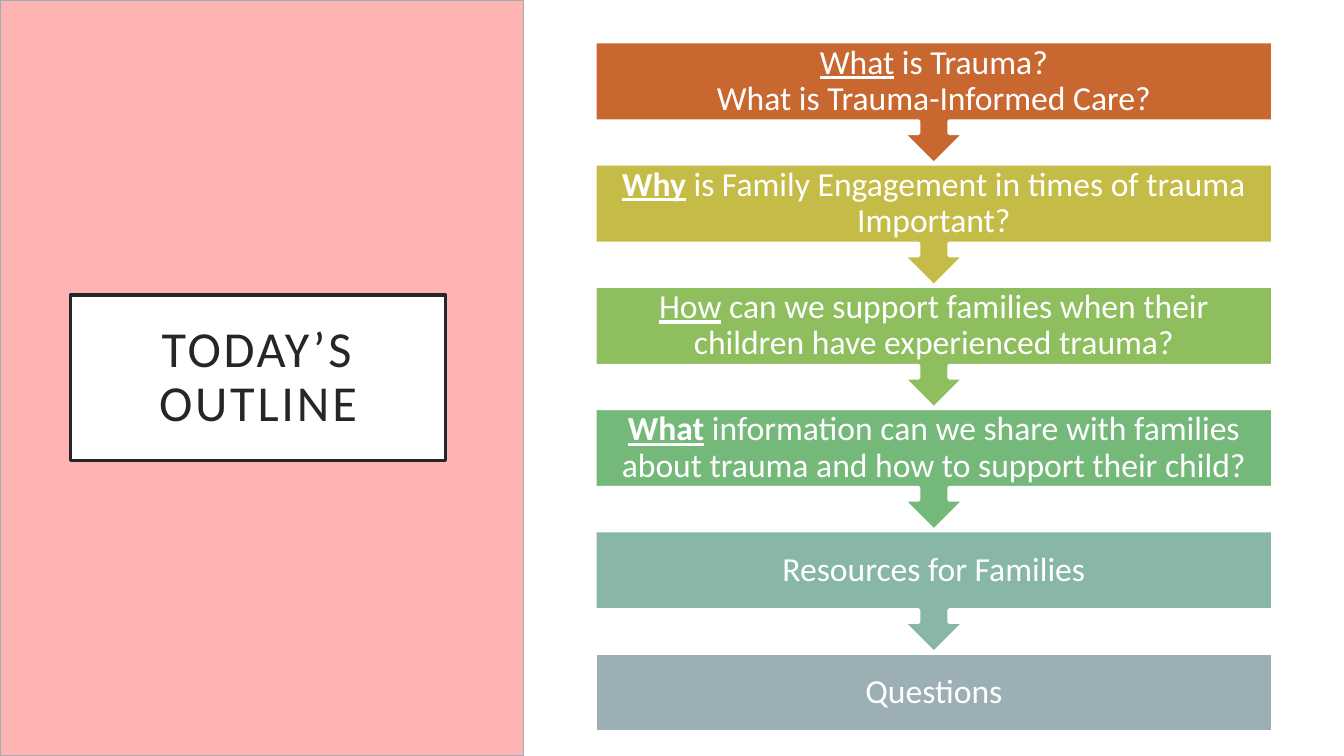
"""Builds the outline slide: a title panel beside a chain of six topics."""
import pptx
import pptx.util
import pptx.dml.color
import pptx.enum.shapes
import pptx.enum.text

Cm = pptx.util.Cm
Pt = pptx.util.Pt
RGBColor = pptx.dml.color.RGBColor
SHAPE = pptx.enum.shapes.MSO_SHAPE

WHITE = RGBColor(0xFF, 0xFF, 0xFF)
INK = RGBColor(0x26, 0x26, 0x26)
PINK = RGBColor(0xFF, 0xB3, 0xB3)
SLATE = RGBColor(0x9B, 0xAF, 0xB5)
ORANGE = RGBColor(0xC9, 0x67, 0x31)
MUSTARD = RGBColor(0xC4, 0xBC, 0x47)
LIME = RGBColor(0x8E, 0xBE, 0x5E)
GREEN = RGBColor(0x74, 0xB9, 0x7A)
TEAL = RGBColor(0x88, 0xB6, 0xA7)

SLIDE_WIDTH, SLIDE_HEIGHT = 33.87, 19.05
PANEL_WIDTH = 13.21
TOPIC_LEFT, TOPIC_TOP, TOPIC_WIDTH = 14.99, 1.05, 17.09
BOX_HEIGHT, TOPIC_STEP = 2, 3.08

TOPICS = [
    (ORANGE, False, [("What", " is Trauma?"), ("", "What is Trauma-Informed Care?")]),
    (MUSTARD, True, [("Why", " is Family Engagement in times of trauma Important?")]),
    (LIME, False, [("How", " can we support families when their children have experienced trauma?")]),
    (GREEN, True, [("What", " information can we share with families about trauma and how to support their child?")]),
    (TEAL, False, [("", "Resources for Families")]),
    (SLATE, False, [("", "Questions")]),
]


def add_block(kind, left, top, width, height, fill, line=None, line_width=2.5):
    block = slide.shapes.add_shape(kind, Cm(left), Cm(top), Cm(width), Cm(height))
    block.shadow.inherit = False
    block.fill.solid()
    block.fill.fore_color.rgb = fill
    if line is None:
        block.line.fill.background()
    else:
        block.line.color.rgb = line
        block.line.width = Pt(line_width)
    return block


def format_text(block, side_inset, size, color):
    frame = block.text_frame
    frame.word_wrap = True
    frame.vertical_anchor = pptx.enum.text.MSO_ANCHOR.MIDDLE
    frame.margin_left = frame.margin_right = Cm(side_inset)
    frame.margin_top = frame.margin_bottom = 0
    for paragraph in frame.paragraphs:
        paragraph.alignment = pptx.enum.text.PP_ALIGN.CENTER
        paragraph.line_spacing = 0.9
        paragraph.font.name = "Calibri"
        paragraph.font.size = Pt(size)
        paragraph.font.color.rgb = color


presentation = pptx.Presentation()
presentation.slide_width = Cm(SLIDE_WIDTH)
presentation.slide_height = Cm(SLIDE_HEIGHT)
slide = presentation.slides.add_slide(presentation.slide_layouts[6])

add_block(SHAPE.RECTANGLE, 0, 0, PANEL_WIDTH, SLIDE_HEIGHT, PINK, SLATE, 1)
title = add_block(SHAPE.RECTANGLE, 1.78, 7.44, 9.45, 4.17, WHITE, INK)
title.text_frame.text = "TODAY’S OUTLINE"
format_text(title, 0.51, 36, INK)
title.text_frame.paragraphs[0].runs[0].font._element.set("spc", "200")
add_block(SHAPE.RECTANGLE, PANEL_WIDTH, 0, SLIDE_WIDTH - PANEL_WIDTH, SLIDE_HEIGHT, WHITE)

last = len(TOPICS) - 1
for index in range(last, -1, -1):
    color, bold, lines = TOPICS[index]
    kind, height = SHAPE.DOWN_ARROW_CALLOUT, TOPIC_STEP
    if index == last:
        kind, height = SHAPE.RECTANGLE, BOX_HEIGHT
    topic = add_block(kind, TOPIC_LEFT, TOPIC_TOP + index * TOPIC_STEP,
                      TOPIC_WIDTH, height, color, WHITE)
    for number, (keyword, rest) in enumerate(lines):
        frame = topic.text_frame
        paragraph = frame.add_paragraph() if number else frame.paragraphs[0]
        if keyword:
            lead = paragraph.add_run()
            lead.text = keyword
            lead.font.underline = True
            lead.font.bold = bold
        paragraph.add_run().text = rest
    format_text(topic, 0.48, 24, WHITE)

presentation.save("out.pptx")
